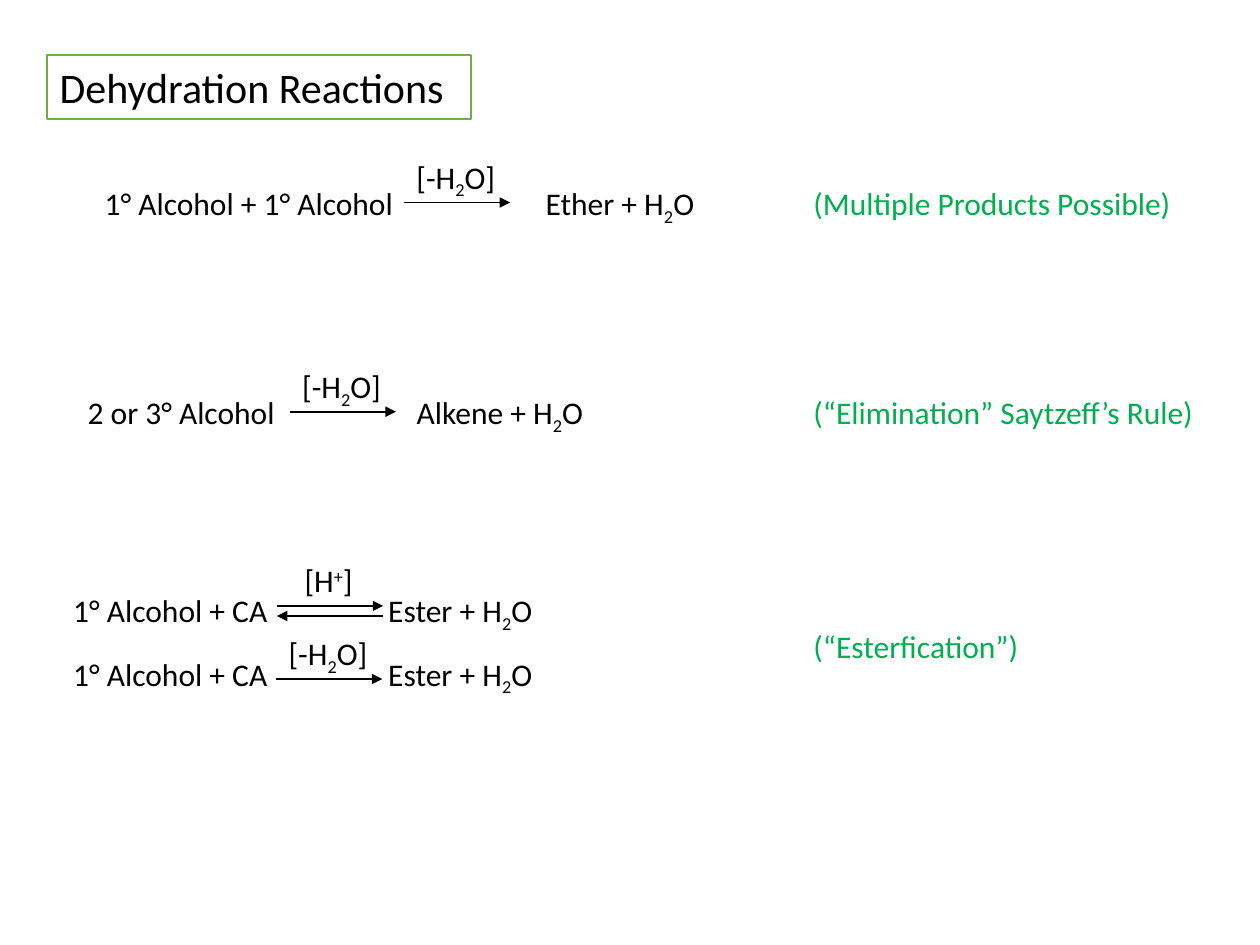
from dataclasses import dataclass

import pptx
import pptx.dml.color
import pptx.enum.shapes
import pptx.enum.text
import pptx.oxml
import pptx.oxml.ns
import pptx.util

Pt = pptx.util.Pt
BASELINES = {"_": "-25000", "^": "30000"}


@dataclass(frozen=True)
class Theme:
    font: str = "Calibri"
    title_size: float = 24
    body_size: float = 18
    ink: str = "000000"
    note: str = "00B050"
    paper: str = "FFFFFF"
    frame: str = "70AD47"
    line_width: float = 1
    text_height: float = 29


def rgb(code):
    return pptx.dml.color.RGBColor.from_string(code)


def split_marks(text):
    """Yield (text, baseline) pairs; _ or ^ lowers or raises the next character."""
    plain = ""
    characters = iter(text)
    for character in characters:
        if character in BASELINES:
            yield plain, None
            yield next(characters), BASELINES[character]
            plain = ""
        else:
            plain += character
    if plain:
        yield plain, None


def write_text(shape, text, *, font, size, color, tab=None):
    frame = shape.text_frame
    frame.word_wrap = True
    frame.auto_size = pptx.enum.text.MSO_AUTO_SIZE.SHAPE_TO_FIT_TEXT
    paragraph = frame.paragraphs[0]
    paragraph.alignment = pptx.enum.text.PP_ALIGN.LEFT
    if tab is not None:
        stops = pptx.oxml.parse_xml(
            f'<a:tabLst {pptx.oxml.ns.nsdecls("a")}>'
            f'<a:tab pos="{Pt(tab)}" algn="l"/></a:tabLst>'
        )
        paragraph._p.get_or_add_pPr().append(stops)
    for part, baseline in split_marks(text):
        run = paragraph.add_run()
        run.text = part
        run.font.name = font
        run.font.size = Pt(size)
        run.font.color.rgb = rgb(color)
        if baseline:
            run.font._element.set("baseline", baseline)


class ReactionSlide:
    def __init__(self, slide, theme):
        self.slide = slide
        self.theme = theme

    def title(self, text, left, top, width, height):
        theme = self.theme
        box = self.slide.shapes.add_shape(
            pptx.enum.shapes.MSO_SHAPE.RECTANGLE,
            Pt(left), Pt(top), Pt(width), Pt(height),
        )
        box.shadow.inherit = False
        box.fill.solid()
        box.fill.fore_color.rgb = rgb(theme.paper)
        box.line.color.rgb = rgb(theme.frame)
        box.line.width = Pt(theme.line_width)
        write_text(box, text, font=theme.font, size=theme.title_size, color=theme.ink)

    def label(self, text, left, top, width, color=None, tab=None, shapes=None):
        theme = self.theme
        box = (shapes or self.slide.shapes).add_textbox(
            Pt(left), Pt(top), Pt(width), Pt(theme.text_height)
        )
        write_text(box, text, font=theme.font, size=theme.body_size,
                   color=color or theme.ink, tab=tab)

    def arrow(self, shapes, start, end, y):
        arrow = shapes.add_connector(
            pptx.enum.shapes.MSO_CONNECTOR.STRAIGHT, Pt(start), Pt(y), Pt(end), Pt(y)
        )
        arrow.line.color.rgb = rgb(self.theme.ink)
        arrow.line.width = Pt(self.theme.line_width)
        namespace = pptx.oxml.ns.nsdecls("a")
        arrow.line._get_or_add_ln().append(
            pptx.oxml.parse_xml(f'<a:tailEnd {namespace} type="triangle"/>')
        )
        arrow._element.spPr.append(pptx.oxml.parse_xml(f"<a:effectLst {namespace}/>"))

    def reaction(self, equation, left, top, width, tab, arrow_left, arrow_y,
                 catalyst="[-H_2O]", catalyst_width=60.5, reversible=False):
        """Group an equation with its arrow and the catalyst centred above it."""
        arrow_length, catalyst_rise, arrow_gap = 60.75, 29.25, 5.75
        arrow_right = arrow_left + arrow_length
        shapes = self.slide.shapes.add_group_shape().shapes
        self.arrow(shapes, arrow_left, arrow_right, arrow_y)
        self.label(catalyst, arrow_left + (arrow_length - catalyst_width) / 2,
                   arrow_y - catalyst_rise, catalyst_width, shapes=shapes)
        if reversible:
            self.arrow(shapes, arrow_right, arrow_left, arrow_y + arrow_gap)
        self.label(equation, left, top, width, tab=tab, shapes=shapes)


def main():
    deck = pptx.Presentation()
    deck.slide_width, deck.slide_height = Pt(720), Pt(540)
    theme = Theme()
    page = ReactionSlide(deck.slides.add_slide(deck.slide_layouts[6]), theme)

    page.title("Dehydration Reactions", 27, 31.5, 242, 36.5)

    page.reaction("1° Alcohol + 1° Alcohol\tEther + H_2O", 52.75, 101.5, 360, 252,
                  arrow_left=230.75, arrow_y=115.75)
    page.reaction("2 or 3° Alcohol\tAlkene + H_2O", 43, 221, 306, 188,
                  arrow_left=165.5, arrow_y=235.25)

    ester = "1° Alcohol + CA\tEster + H_2O"
    ester_left, ester_width, ester_tab = 34.75, 284.5, 180
    page.reaction(ester, ester_left, 370.5, ester_width, ester_tab,
                  arrow_left=157.75, arrow_y=388)
    page.reaction(ester, ester_left, 334.25, ester_width, ester_tab,
                  arrow_left=158.25, arrow_y=346.25,
                  catalyst="[H^+]", catalyst_width=43.25, reversible=True)

    remarks = [
        ("(Multiple Products Possible)", 101.5, 221),
        ("(“Elimination” Saytzeff’s Rule)", 221, 235),
        ("(“Esterfication”)", 354.5, 132.5),
    ]
    for remark, top, width in remarks:
        page.label(remark, 457.75, top, width, color=theme.note)

    deck.save("out.pptx")


if __name__ == "__main__":
    main()
